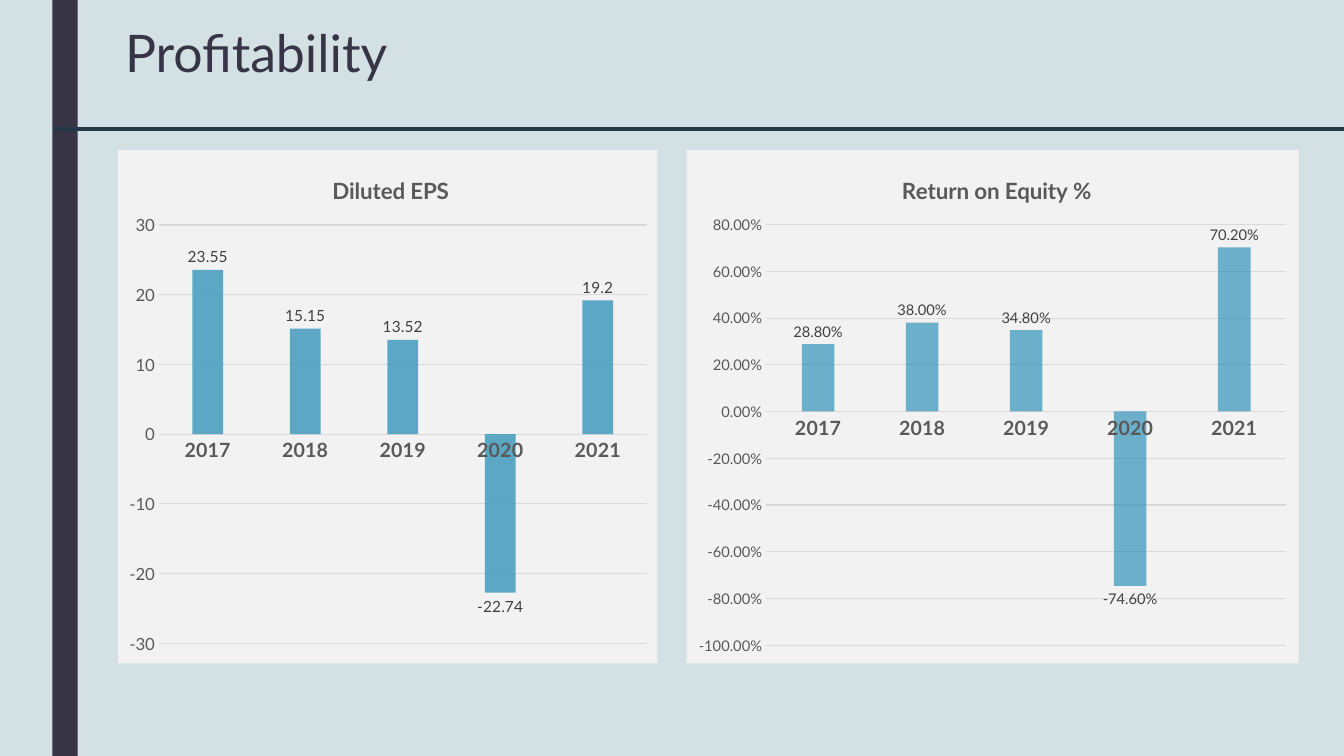
import pptx
import pptx.chart.data
import pptx.dml.color
import pptx.enum.chart
import pptx.enum.shapes
import pptx.enum.text
import pptx.oxml
import pptx.oxml.ns
import pptx.util
from lxml import etree

Inches = pptx.util.Inches
Pt = pptx.util.Pt
qn = pptx.oxml.ns.qn


def color(value):
    return pptx.dml.color.RGBColor.from_string(value)


class SlideBuilder:
    font = "Lato"
    dark = "373545"
    rule = "253848"
    background = "D3E1E5"
    panel = "F2F2F2"
    bar = "3494BA"
    grid = "D9D9D9"
    axis_text = "595959"
    label_text = "404040"
    years = ["2017", "2018", "2019", "2020", "2021"]

    def __init__(self, presentation):
        self.slide = presentation.slides.add_slide(presentation.slide_layouts[5])
        fill = self.slide.background.fill
        fill.solid()
        fill.fore_color.rgb = color(self.background)

    def style_font(self, font, size, value, bold=False):
        font.name = self.font
        font.size = Pt(size)
        font.bold = bold
        font.color.rgb = color(value)

    def add_title(self, text, left, top, width, height):
        title = self.slide.shapes.title
        title.left, title.top = Inches(left), Inches(top)
        title.width, title.height = Inches(width), Inches(height)
        frame = title.text_frame
        frame.text = text
        frame.word_wrap = True
        frame.auto_size = pptx.enum.text.MSO_AUTO_SIZE.NONE
        frame.vertical_anchor = pptx.enum.text.MSO_ANCHOR.TOP
        paragraph = frame.paragraphs[0]
        paragraph.alignment = pptx.enum.text.PP_ALIGN.LEFT
        paragraph.line_spacing = 0.89
        self.style_font(paragraph.runs[0].font, 37, self.dark)

    def add_bar(self, left, top, width, height):
        shape = self.slide.shapes.add_shape(
            pptx.enum.shapes.MSO_SHAPE.RECTANGLE,
            Inches(left), Inches(top), Inches(width), Inches(height))
        shape.shadow.inherit = False
        shape.fill.solid()
        shape.fill.fore_color.rgb = color(self.dark)
        shape.line.fill.background()

    def add_rule(self, left, right, top):
        connector = self.slide.shapes.add_connector(
            pptx.enum.shapes.MSO_CONNECTOR.STRAIGHT,
            Inches(left), Inches(top), Inches(right), Inches(top))
        connector.line.color.rgb = color(self.rule)
        connector.line.width = Pt(3)
        etree.SubElement(connector._element.spPr, qn("a:effectLst"))

    def set_layout(self, parent, **places):
        layout = parent.find(qn("c:layout"))
        if layout is None:
            layout = etree.Element(qn("c:layout"))
            parent.insert(0, layout)
        manual = etree.SubElement(layout, qn("c:manualLayout"))
        if "w" in places:
            etree.SubElement(manual, qn("c:layoutTarget")).set("val", "inner")
        for name in ("x", "y"):
            etree.SubElement(manual, qn(f"c:{name}Mode")).set("val", "edge")
        for name, value in places.items():
            etree.SubElement(manual, qn(f"c:{name}")).set("val", str(value))

    def fill_panel(self, chart):
        properties = pptx.oxml.parse_xml(
            f'<c:spPr {pptx.oxml.ns.nsdecls("c", "a")}><a:solidFill>'
            f'<a:srgbClr val="{self.panel}"/></a:solidFill>'
            '<a:ln><a:noFill/></a:ln></c:spPr>')
        chart._chartSpace.find(qn("c:chart")).addnext(properties)

    def style_axes(self, chart, size, number_format, low, high, step):
        category, value = chart.category_axis, chart.value_axis
        for axis in (category, value):
            axis.major_tick_mark = pptx.enum.chart.XL_TICK_MARK.NONE
            axis.minor_tick_mark = pptx.enum.chart.XL_TICK_MARK.NONE
        self.style_font(category.tick_labels.font, 14, self.axis_text, True)
        self.style_font(value.tick_labels.font, size, self.axis_text)
        value.tick_labels.number_format = number_format
        value.tick_labels.number_format_is_linked = False
        value.minimum_scale, value.maximum_scale = low, high
        value.major_unit = step
        value.format.line.fill.background()
        value.has_major_gridlines = True
        for line in (category.format.line, value.major_gridlines.format.line):
            line.color.rgb = color(self.grid)
            line.width = Pt(0.75)

    def style_series(self, chart, size, number_format, opacity):
        plot = chart.plots[0]
        plot.gap_width, plot.overlap = 219, -27
        plot.vary_by_categories = False
        series = plot.series[0]
        series.invert_if_negative = False
        series.format.fill.solid()
        series.format.fill.fore_color.rgb = color(self.bar)
        tone = series._element.find(".//" + qn("a:srgbClr"))
        etree.SubElement(tone, qn("a:alpha")).set("val", str(opacity * 1000))
        labels = series.data_labels
        labels.show_value = True
        labels.position = pptx.enum.chart.XL_LABEL_POSITION.OUTSIDE_END
        labels.number_format = number_format
        labels.number_format_is_linked = False
        self.style_font(labels.font, size, self.label_text)

    def add_column_chart(self, title, values, left, width, scale, axis_size,
                         label_size, number_format, opacity, title_x, plot_area):
        data = pptx.chart.data.CategoryChartData()
        data.categories = self.years
        data.add_series("Series 1", values)
        chart = self.slide.shapes.add_chart(
            pptx.enum.chart.XL_CHART_TYPE.COLUMN_CLUSTERED,
            Inches(left), Inches(1.49), Inches(width), Inches(5.09), data).chart
        chart.has_legend = False
        self.style_font(chart.font, 10, "000000")
        chart.has_title = True
        frame = chart.chart_title.text_frame
        frame.text = title
        self.style_font(frame.paragraphs[0].runs[0].font, 16, self.axis_text, True)
        self.fill_panel(chart)
        self.style_axes(chart, axis_size, number_format, *scale)
        self.style_series(chart, label_size, number_format, opacity)
        self.set_layout(chart.chart_title._element, x=title_x, y=0.04)
        self.set_layout(chart.plots[0]._element.getparent(), **plot_area)


def main():
    presentation = pptx.Presentation()
    presentation.slide_width = Inches(13.33)
    presentation.slide_height = Inches(7.5)
    builder = SlideBuilder(presentation)
    builder.add_bar(0.52, 0, 0.25, 7.5)
    builder.add_title("Profitability", 1.14, 0.23, 10.78, 1.37)
    builder.add_column_chart(
        "Return on Equity %", [0.288, 0.38, 0.348, -0.746, 0.702],
        left=6.81, width=6.07, scale=(-1, 0.8, 0.2), axis_size=10.5,
        label_size=10.5, number_format="0.00%", opacity=71, title_x=0.345,
        plot_area={"x": 0.13, "y": 0.145, "w": 0.85, "h": 0.82})
    builder.add_column_chart(
        "Diluted EPS", [23.55, 15.15, 13.52, -22.74, 19.2],
        left=1.17, width=5.35, scale=(-30, 30, 10), axis_size=12,
        label_size=11, number_format="General", opacity=79, title_x=0.39,
        plot_area={"x": 0.076, "y": 0.146, "w": 0.904, "h": 0.815})
    builder.add_rule(0.54, 13.33, 1.28)
    presentation.save("out.pptx")


if __name__ == "__main__":
    main()
